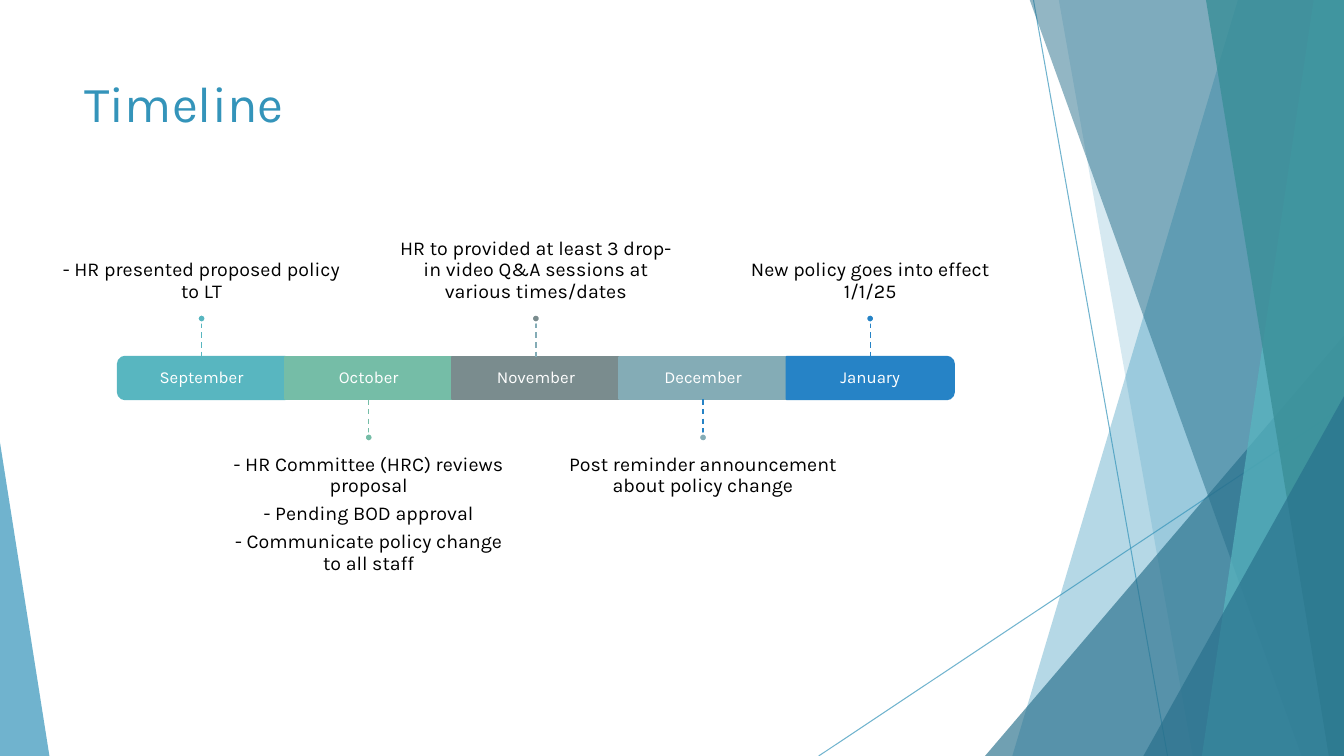
from dataclasses import dataclass

from lxml.etree import SubElement
from pptx import Presentation
from pptx.dml.color import RGBColor
from pptx.enum.dml import MSO_LINE
from pptx.enum.shapes import MSO_CONNECTOR, MSO_SHAPE as SHAPE
from pptx.enum.text import MSO_ANCHOR as ANCHOR, MSO_AUTO_SIZE, PP_ALIGN as ALIGN
from pptx.oxml.ns import qn
from pptx.util import Inches, Pt


@dataclass(frozen=True)
class Theme:
    font: str = "Karla"
    title_size: int = 36
    note_size: int = 14
    month_size: int = 12
    blue: str = "3494BA"
    deep: str = "276F8B"
    aqua: str = "58B6C0"
    teal: str = "3A8F98"
    green: str = "75BDA7"
    gray: str = "7A8C8E"
    mist: str = "84ACB6"
    azure: str = "2683C6"
    white: str = "FFFFFF"
    black: str = "000000"


T = Theme()
WIDTH, HEIGHT = 13.33, 7.5

MONTHS = [
    ("September", T.aqua, T.aqua, ["- HR presented proposed policy to LT"]),
    ("October", T.green, T.green, [
        "- HR Committee (HRC) reviews proposal",
        "- Pending BOD approval",
        "- Communicate policy change to all staff",
    ]),
    ("November", T.gray, T.mist,
     ["HR to provided at least 3 drop-in video Q&A sessions at various times/dates"]),
    ("December", T.mist, T.azure, ["Post reminder announcement about policy change"]),
    ("January", T.azure, T.azure, ["New policy goes into effect 1/1/25"]),
]


def rgb(color):
    return RGBColor.from_string(color)


def set_alpha(fill, percent):
    color = next(fill.iter(qn("a:srgbClr")))
    SubElement(color, qn("a:alpha")).set("val", str(percent * 1000))


def paint(sp, color, alpha=None, line=None):
    sp.shadow.inherit = False
    sp.fill.solid()
    sp.fill.fore_color.rgb = rgb(color)
    if alpha:
        set_alpha(sp.element.spPr.find(qn("a:solidFill")), alpha)
    if line:
        sp.line.color.rgb = rgb(line)
        sp.line.width = Pt(1.5)
    else:
        sp.line.fill.background()


def add_preset(s, kind, x, y, w, h):
    return s.shapes.add_shape(kind, Inches(x), Inches(y), Inches(w), Inches(h))


def add_line(s, start, end, color, width, alpha=None, dash=None):
    points = [Inches(v) for v in (*start, *end)]
    line = s.shapes.add_connector(MSO_CONNECTOR.STRAIGHT, *points)
    line.line.color.rgb = rgb(color)
    line.line.width = Pt(width)
    if dash:
        line.line.dash_style = dash
    spPr = line.element.spPr
    if alpha:
        set_alpha(spPr.find(qn("a:ln")), alpha)
    SubElement(spPr, qn("a:effectLst"))


def add_text(s, box, lines, size, color, anchor, insets):
    tf = s.shapes.add_textbox(*[Inches(v) for v in box]).text_frame
    tf.word_wrap = True
    tf.vertical_anchor = anchor
    tf.margin_left, tf.margin_top, tf.margin_right, tf.margin_bottom = [
        Inches(v) for v in insets]
    tf.text = "\n".join(lines)
    for p in tf.paragraphs:
        p.alignment = ALIGN.CENTER
        p.line_spacing = 0.9
        p.space_after = Pt(size * 0.35)
        p.font.name = T.font
        p.font.size = Pt(size)
        p.font.color.rgb = rgb(color)


def add_facet(s, top, bottom, color, alpha):
    points = [(Inches(x), Inches(y)) for x, y in
              [(top, -0.01), (WIDTH, -0.01), (WIDTH, HEIGHT), (bottom, HEIGHT)]]
    builder = s.shapes.build_freeform(*points[0])
    builder.add_line_segments(points[1:], close=True)
    paint(builder.convert_to_shape(), color, alpha)


def add_corner(s, x, w, h, peak, color, alpha):
    sp = add_preset(s, SHAPE.ISOSCELES_TRIANGLE, x, HEIGHT - h, w, h)
    sp.adjustments[0] = peak
    paint(sp, color, alpha)


def add_backdrop(s):
    add_line(s, (10.25, 0), (11.58, HEIGHT), T.blue, 0.75, alpha=70)
    add_line(s, (WIDTH, 4.03), (8.12, HEIGHT), T.blue, 0.75, alpha=70)
    add_facet(s, 12.28, 10.04, T.blue, 36)
    add_facet(s, 10.5, 11.83, T.blue, 20)
    add_corner(s, 9.77, 3.56, 4.17, 1, T.deep, 66)
    add_facet(s, 10.21, 12.91, T.deep, 50)
    add_facet(s, 13.03, 11.92, T.aqua, 70)
    add_facet(s, 11.96, 13.18, T.teal, 80)
    add_corner(s, 11.34, 1.99, 3.57, 1, T.deep, 66)
    add_corner(s, 0, 0.49, 3.11, 0, T.blue, 70)


def add_title(s, x, y, w, h):
    title = s.shapes.title
    title.left, title.top, title.width, title.height = [
        Inches(v) for v in (x, y, w, h)]
    tf = title.text_frame
    tf.text = "Timeline"
    tf.auto_size = MSO_AUTO_SIZE.NONE
    tf.vertical_anchor = ANCHOR.TOP
    p = tf.paragraphs[0]
    p.alignment = ALIGN.LEFT
    p.font.name = T.font
    p.font.size = Pt(T.title_size)
    p.font.color.rgb = rgb(T.blue)


def add_segment(s, x, y, w, h, color, rotation):
    if rotation is None:
        sp = add_preset(s, SHAPE.RECTANGLE, x, y, w, h)
    else:
        sp = add_preset(s, SHAPE.ROUND_2_SAME_RECTANGLE,
                        x + (w - h) / 2, y + (h - w) / 2, h, w)
        sp.rotation = rotation
    paint(sp, color, line=color)


def add_timeline(s, x, y, w, h):
    step = w / len(MONTHS)
    stem, dot, note_w, note_h, gap = 0.34, 0.08, 2.76, 1.49, 0.12
    rotations = {0: 270, len(MONTHS) - 1: 90}
    for i, (month, color, stem_color, notes) in enumerate(MONTHS):
        left = x + i * step
        mid = left + step / 2
        add_segment(s, left, y, step, h, color, rotations.get(i))
        add_text(s, (left, y, step, h), [month], T.month_size, T.white,
                 ANCHOR.MIDDLE, (0.1, 0.1, 0.1, 0.1))
        if i % 2 == 0:
            start, end = y - stem, y
            dot_y = start - dot
            note_y = y - 0.42 - note_h
            anchor, insets = ANCHOR.BOTTOM, (0, 0, 0, gap)
        else:
            start, end = y + h, y + h + stem
            dot_y = end
            note_y = y + h + 0.43
            anchor, insets = ANCHOR.TOP, (0, gap, 0, 0)
        add_text(s, (mid - note_w / 2, note_y, note_w, note_h), notes,
                 T.note_size, T.black, anchor, insets)
        add_line(s, (mid, start), (mid, end), stem_color, 1, dash=MSO_LINE.DASH)
        marker = add_preset(s, SHAPE.OVAL, mid - dot / 2, dot_y, dot, dot)
        paint(marker, color, line=T.white)


def main():
    prs = Presentation()
    prs.slide_width, prs.slide_height = Inches(WIDTH), Inches(HEIGHT)
    s = prs.slides.add_slide(prs.slide_layouts[5])
    add_backdrop(s)
    add_title(s, 0.74, 0.67, 9.4, 1.44)
    add_timeline(s, 1.17, 3.54, 8.29, 0.42)
    prs.save("out.pptx")


if __name__ == "__main__":
    main()
